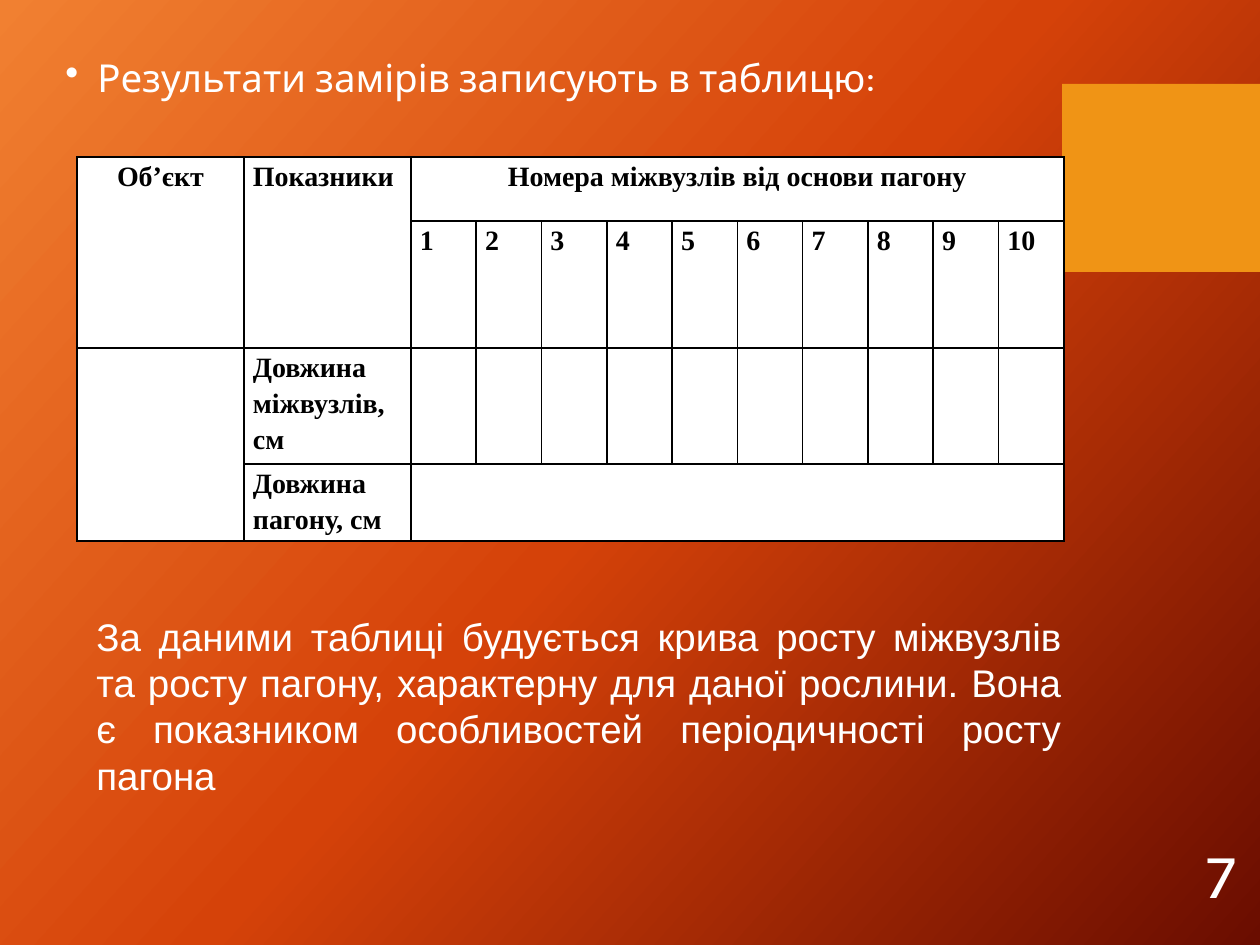
import copy
from dataclasses import dataclass

import lxml.etree
import pptx
import pptx.dml.color
import pptx.enum.shapes
import pptx.enum.text
import pptx.oxml.ns
import pptx.util

qn = pptx.oxml.ns.qn
ALIGN = pptx.enum.text.PP_ALIGN
ANCHOR = pptx.enum.text.MSO_ANCHOR


@dataclass(frozen=True)
class Theme:
    gradient: tuple = ((0, "F18031"), (0.5, "D54209"), (1, "6A0D00"))
    angle: int = 42
    accent: str = "F09415"
    light: str = "FFFFFF"
    dark: str = "000000"
    heading_font: str = "Karla"
    body_font: str = "Arial"
    table_font: str = "Times New Roman"
    body_size: int = 22
    table_size: int = 16
    number_size: int = 36


THEME = Theme()


def px(n):
    return pptx.util.Emu(round(n * 914400 / 126))


def rgb(value):
    return pptx.dml.color.RGBColor.from_string(value)


def style(p, font, size, color, align, bold=False):
    p.alignment = align
    p.font.name = font
    p.font.size = pptx.util.Pt(size)
    p.font.color.rgb = rgb(color)
    p.font.bold = bold


def add_background(s):
    fill = s.background.fill
    fill.gradient()
    fill.gradient_angle = 360 - THEME.angle
    stops = s.element.find(".//" + qn("a:gsLst"))
    stops.insert(1, copy.deepcopy(stops[0]))
    for stop, (position, color) in zip(fill.gradient_stops, THEME.gradient):
        stop.position = position
        stop.color.rgb = rgb(color)


def add_accent(s, x, y, w, h):
    rect = pptx.enum.shapes.MSO_SHAPE.RECTANGLE
    sp = s.shapes.add_shape(rect, px(x), px(y), px(w), px(h))
    sp.shadow.inherit = False
    sp.fill.solid()
    sp.fill.fore_color.rgb = rgb(THEME.accent)
    sp.line.fill.background()


def add_text(s, x, y, w, h, text, font, size, align, anchor=ANCHOR.TOP):
    tf = s.shapes.add_textbox(px(x), px(y), px(w), px(h)).text_frame
    tf.word_wrap = True
    tf.vertical_anchor = anchor
    p = tf.paragraphs[0]
    p.text = text
    style(p, font, size, THEME.light, align)
    return p


def add_bullet_line(s, x, y, w, h, text):
    p = add_text(s, x, y, w, h, text, THEME.heading_font, THEME.body_size, ALIGN.JUSTIFY)
    p.line_spacing = 0.9
    pPr = p._p.get_or_add_pPr()
    pPr.set("marL", str(px(32)))
    pPr.set("indent", str(px(-32)))
    bullet = lxml.etree.Element(qn("a:buChar"), char="•")
    pPr.find(qn("a:defRPr")).addprevious(bullet)


def format_cell(cell, centered):
    cell.margin_left = cell.margin_right = px(9)
    cell.margin_top = cell.margin_bottom = 0
    p = cell.text_frame.paragraphs[0]
    p.line_spacing = 1.15
    style(p, THEME.table_font, THEME.table_size, THEME.dark,
          ALIGN.CENTER if centered else ALIGN.JUSTIFY, True)
    tcPr = cell._tc.get_or_add_tcPr()
    for side in ("a:lnL", "a:lnR", "a:lnT", "a:lnB"):
        ln = lxml.etree.SubElement(tcPr, qn(side), w=str(pptx.util.Pt(1)))
        solid = lxml.etree.SubElement(ln, qn("a:solidFill"))
        lxml.etree.SubElement(solid, qn("a:srgbClr"), val=THEME.dark)
    cell.fill.solid()
    cell.fill.fore_color.rgb = rgb(THEME.light)


def add_measurements(s, x, y, w, h):
    label_w = 167
    node_w = (w - 2 * label_w) / 10
    widths = [label_w] * 2 + [node_w] * 10
    heights = [64, 127, 108, h - 299]
    table = s.shapes.add_table(4, 12, px(x), px(y), px(w), px(h)).table
    for column, width in zip(table.columns, widths):
        column.width = px(width)
    for row, height in zip(table.rows, heights):
        row.height = px(height)
    texts = {
        (0, 0): "Об’єкт",
        (0, 1): "Показники",
        (0, 2): "Номера міжвузлів від основи пагону",
        (2, 1): "Довжина міжвузлів, см",
        (3, 1): "Довжина пагону, см",
    }
    texts.update({(1, n + 1): str(n) for n in range(1, 11)})
    for r in range(4):
        for c in range(12):
            cell = table.cell(r, c)
            cell.text = texts.get((r, c), "")
            format_cell(cell, (r, c) in ((0, 0), (0, 2)))
    for first, last in (((0, 0), (1, 0)), ((0, 1), (1, 1)), ((0, 2), (0, 11)),
                        ((2, 0), (3, 0)), ((3, 2), (3, 11))):
        table.cell(*first).merge(table.cell(*last))


def main():
    prs = pptx.Presentation()
    prs.slide_width, prs.slide_height = px(1260), px(945)
    s = prs.slides.add_slide(prs.slide_layouts[6])
    add_background(s)
    add_accent(s, 1062, 84, 198, 188)
    add_text(s, 1194, 806, 66, 135, "7", THEME.heading_font, THEME.number_size,
             ALIGN.LEFT, ANCHOR.MIDDLE)
    add_bullet_line(s, 53, 53, 1008, 73, "Результати замірів записують в таблицю:")
    add_measurements(s, 77, 157, 987, 370)
    add_text(s, 84, 607, 990, 199,
             "За даними таблиці будується крива росту міжвузлів та росту пагону, "
             "характерну для даної рослини. Вона є показником особливостей "
             "періодичності росту пагона",
             THEME.body_font, THEME.body_size, ALIGN.JUSTIFY)
    prs.save("out.pptx")


if __name__ == "__main__":
    main()
